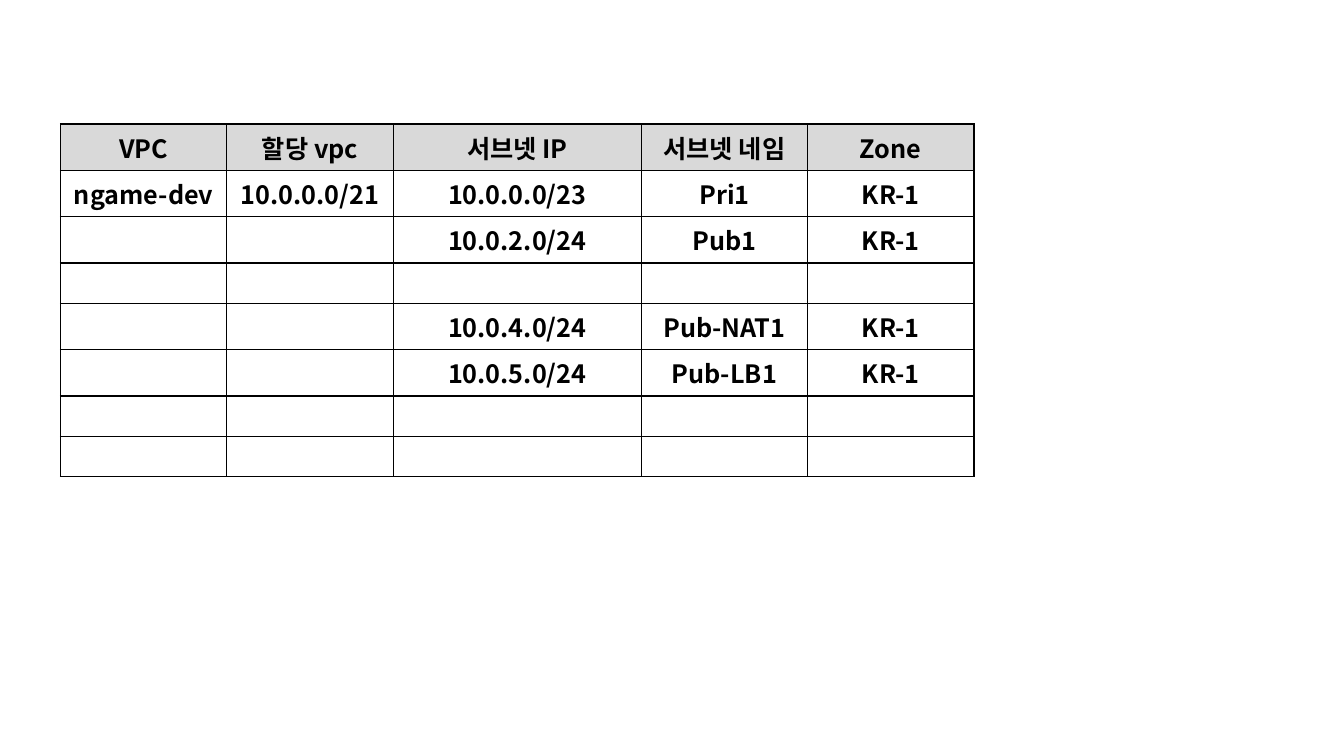
from lxml import etree
from pptx import Presentation
from pptx.dml.color import RGBColor
from pptx.enum.text import MSO_ANCHOR, PP_ALIGN
from pptx.oxml.ns import qn
from pptx.util import Inches, Pt

CENTER = PP_ALIGN.CENTER
MIDDLE = MSO_ANCHOR.MIDDLE
BLACK = RGBColor(0x00, 0x00, 0x00)
WHITE = RGBColor(0xFF, 0xFF, 0xFF)
HEADER_GRAY = RGBColor(0xD9, 0xD9, 0xD9)
FONT = "Noto Sans CJK KR"
BLANK_LAYOUT = 6

COLUMN_WIDTHS = [1.65, 1.65, 2.46, 1.65, 1.65]
TEXT_ROW, EMPTY_ROW = 0.46, 0.4
SUBNETS = [
    ["VPC", "할당 vpc", "서브넷 IP", "서브넷 네임", "Zone"],
    ["ngame-dev", "10.0.0.0/21", "10.0.0.0/23", "Pri1", "KR-1"],
    ["", "", "10.0.2.0/24", "Pub1", "KR-1"],
    [""] * 5,
    ["", "", "10.0.4.0/24", "Pub-NAT1", "KR-1"],
    ["", "", "10.0.5.0/24", "Pub-LB1", "KR-1"],
    [""] * 5,
    [""] * 5,
]
FONT_FORMAT = {"name": FONT, "size": Pt(18), "bold": True}
CELL_FORMAT = {
    "vertical_anchor": MIDDLE,
    "margin_top": Inches(0.04),
    "margin_bottom": Inches(0.04),
}


def add_borders(cell):
    properties = cell._tc.get_or_add_tcPr()
    for position, side in enumerate(("a:lnL", "a:lnR", "a:lnT", "a:lnB")):
        line = etree.Element(qn(side), w=str(Pt(1)))
        fill = etree.SubElement(line, qn("a:solidFill"))
        etree.SubElement(fill, qn("a:srgbClr"), val=str(BLACK))
        properties.insert(position, line)


deck = Presentation()
deck.slide_width, deck.slide_height = Inches(13.33), Inches(7.5)
page = deck.slides.add_slide(deck.slide_layouts[BLANK_LAYOUT])

row_heights = [TEXT_ROW if any(row) else EMPTY_ROW for row in SUBNETS]
subnet_table = page.shapes.add_table(
    len(SUBNETS), len(COLUMN_WIDTHS), Inches(0.6), Inches(1.23),
    Inches(sum(COLUMN_WIDTHS)), Inches(sum(row_heights)),
).table
subnet_table.horz_banding = False

for column, width in zip(subnet_table.columns, COLUMN_WIDTHS):
    column.width = Inches(width)
for row, height in zip(subnet_table.rows, row_heights):
    row.height = Inches(height)

for row_number, texts in enumerate(SUBNETS):
    for column_number, text in enumerate(texts):
        cell = subnet_table.cell(row_number, column_number)
        for name, value in CELL_FORMAT.items():
            setattr(cell, name, value)
        cell.fill.solid()
        cell.fill.fore_color.rgb = WHITE if row_number else HEADER_GRAY
        add_borders(cell)
        if text:
            para = cell.text_frame.paragraphs[0]
            para.alignment = CENTER
            span = para.add_run()
            span.text = text
            for name, value in FONT_FORMAT.items():
                setattr(span.font, name, value)
            span.font.color.rgb = BLACK
            etree.SubElement(span.font._element, qn("a:ea"), typeface=FONT)

deck.save("out.pptx")
